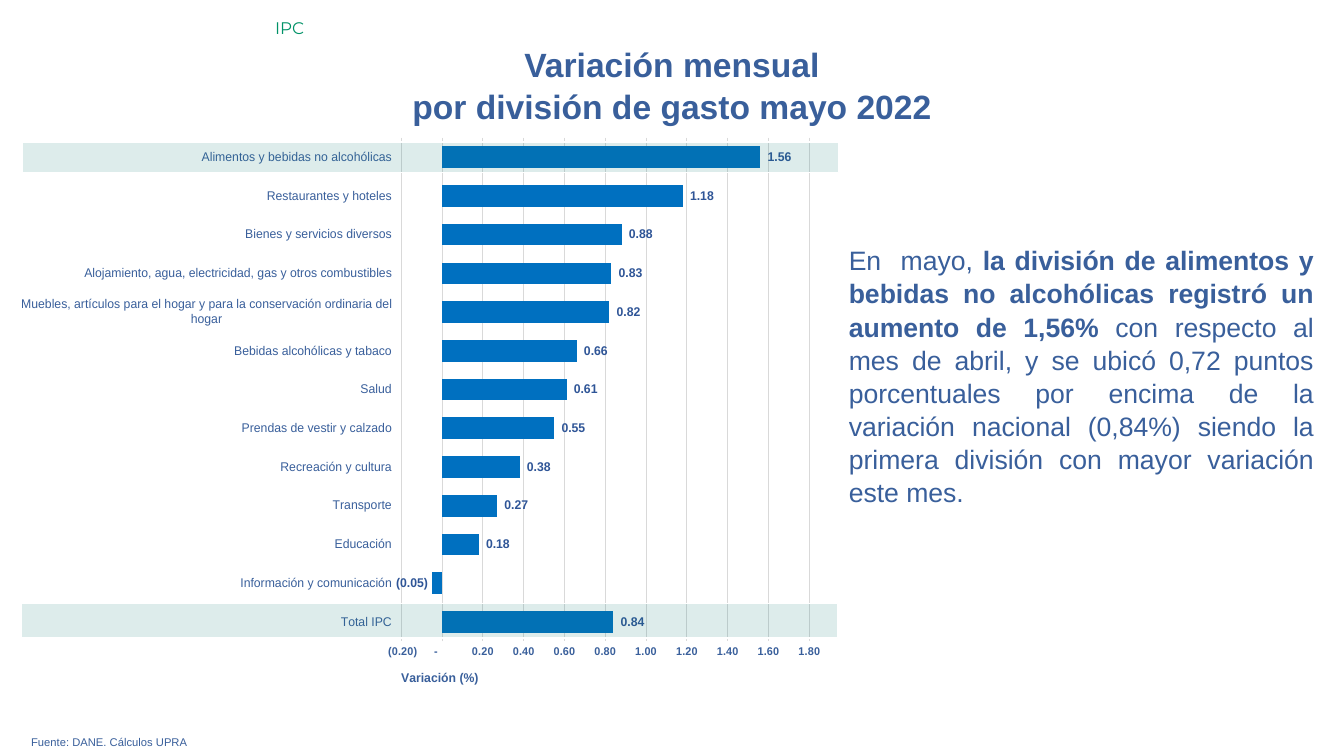
from lxml import etree
from pptx import Presentation
from pptx.chart.data import CategoryChartData
from pptx.dml.color import RGBColor
from pptx.enum.chart import XL_CHART_TYPE, XL_LABEL_POSITION, XL_TICK_LABEL_POSITION, XL_TICK_MARK
from pptx.enum.shapes import MSO_SHAPE
from pptx.enum.text import PP_ALIGN
from pptx.oxml import parse_xml
from pptx.oxml.ns import nsdecls, qn
from pptx.util import Pt

PX = 9144  # 100 px to the inch
TEXT_BLUE = "395F9B"
GRID_GREY = "D9D9D9"
NUMBER_FORMAT = '_(* #,##0.00_);_(* \\(#,##0.00\\);_(* "-"??_);_(@_)'
VARIATIONS = [
    ("Total IPC", 0.84),
    ("Información y comunicación", -0.05),
    ("Educación", 0.18),
    ("Transporte", 0.27),
    ("Recreación y cultura", 0.38),
    ("Prendas de vestir y calzado", 0.55),
    ("Salud", 0.61),
    ("Bebidas alcohólicas y tabaco", 0.66),
    ("Muebles, artículos para el hogar y para la conservación ordinaria del hogar", 0.82),
    ("Alojamiento, agua, electricidad, gas y otros combustibles", 0.83),
    ("Bienes y servicios diversos", 0.88),
    ("Restaurantes y hoteles", 1.18),
    ("Alimentos y bebidas no alcohólicas", 1.56),
]


def px(*lengths):
    return [length * PX for length in lengths]


def rgb(color):
    return RGBColor.from_string(color)


def style_font(font, size, color=TEXT_BLUE, bold=False, name="Arial"):
    font.size = Pt(size)
    font.color.rgb = rgb(color)
    font.bold = bold
    font.name = name


def add_text(page, place, paragraphs, size, align, color=TEXT_BLUE, name="Arial", spacing=1.0):
    """Add a text box; each paragraph is a list of (text, bold) runs."""
    frame = page.shapes.add_textbox(*px(*place)).text_frame
    frame.word_wrap = True
    for index, runs in enumerate(paragraphs):
        para = frame.add_paragraph() if index else frame.paragraphs[0]
        para.alignment = align
        para.line_spacing = spacing
        for text, bold in runs:
            span = para.add_run()
            span.text = text
            style_font(span.font, size, color, bold, name)


def add_band(page, place):
    """Add a translucent stripe that highlights one chart row."""
    band = page.shapes.add_shape(MSO_SHAPE.RECTANGLE, *px(*place))
    band.shadow.inherit = False
    band.fill.solid()
    band.fill.fore_color.rgb = rgb("117A76")
    color = band.fill._xPr.find(qn("a:solidFill"))[0]
    etree.SubElement(color, qn("a:alpha"), val="14000")
    band.line.color.rgb = rgb("FFFFFF")
    band.line.width = Pt(1)


def manual_layout(x, y, width=None, height=None):
    inner = '<c:layoutTarget val="inner"/>' if width else ""
    extent = f'<c:w val="{width}"/><c:h val="{height}"/>' if width else ""
    return parse_xml(
        f'<c:layout {nsdecls("c")}><c:manualLayout>{inner}'
        f'<c:xMode val="edge"/><c:yMode val="edge"/>'
        f'<c:x val="{x}"/><c:y val="{y}"/>{extent}</c:manualLayout></c:layout>'
    )


def style_line(line):
    line.color.rgb = rgb(GRID_GREY)
    line.width = Pt(0.75)


def style_category_axis(axis):
    axis.tick_label_position = XL_TICK_LABEL_POSITION.LOW
    axis.major_tick_mark = XL_TICK_MARK.NONE
    axis.has_major_gridlines = False
    style_line(axis.format.line)
    style_font(axis.tick_labels.font, 9)


def style_value_axis(axis):
    axis.minimum_scale, axis.maximum_scale, axis.major_unit = -0.2, 1.8, 0.2
    axis.major_tick_mark = XL_TICK_MARK.NONE
    axis.has_major_gridlines = True
    style_line(axis.major_gridlines.format.line)
    axis.format.line.fill.background()
    labels = axis.tick_labels
    labels.number_format = NUMBER_FORMAT
    labels.number_format_is_linked = False
    style_font(labels.font, 8, bold=True)
    span = axis.axis_title.text_frame.paragraphs[0].add_run()
    span.text = "Variación (%)"
    style_font(span.font, 9, bold=True)
    title = axis.axis_title._element
    for layout in title.findall(qn("c:layout")):
        title.remove(layout)
    title.find(qn("c:tx")).addnext(manual_layout(0.45, 0.95))


def add_variation_chart(page, place):
    data = CategoryChartData(number_format="0.00")
    data.categories = [division for division, _ in VARIATIONS]
    data.add_series("Variación", [value for _, value in VARIATIONS])
    chart = page.shapes.add_chart(XL_CHART_TYPE.BAR_CLUSTERED, *px(*place), data).chart
    chart.has_title = False
    chart.has_legend = False
    style_font(chart.font, 10.5, "000000")
    style_category_axis(chart.category_axis)
    style_value_axis(chart.value_axis)

    plot = chart.plots[0]
    plot.gap_width = 79
    plot.vary_by_categories = False
    series = plot.series[0]
    series.invert_if_negative = False
    series.format.fill.solid()
    series.format.fill.fore_color.rgb = rgb("0070C0")
    labels = series.data_labels
    labels.show_value = True
    labels.position = XL_LABEL_POSITION.OUTSIDE_END
    labels.number_format = NUMBER_FORMAT
    labels.number_format_is_linked = False
    style_font(labels.font, 9, "2F5597", bold=True)

    area = chart._chartSpace.chart.plotArea
    for layout in area.findall(qn("c:layout")):
        area.remove(layout)
    area.insert(0, manual_layout(0.453, 0.036, 0.521, 0.869))


def main():
    deck = Presentation()
    deck.slide_width, deck.slide_height = px(1333, 750)
    page = deck.slides.add_slide(deck.slide_layouts[6])

    add_variation_chart(page, (21, 116, 802, 575))
    add_text(page, (21, 725, 1291, 24), [[("Fuente: DANE. Cálculos UPRA", False)]],
             8, PP_ALIGN.JUSTIFY)
    comment = [
        ("En  mayo, ", False),
        ("la división de alimentos y bebidas no alcohólicas registró un aumento de 1,56% ", True),
        ("con respecto al mes de abril, y se ubicó 0,72 puntos porcentuales por encima de la "
         "variación nacional (0,84%) siendo la primera división con mayor variación este mes.",
         False),
    ]
    add_text(page, (832, 236, 481, 266), [comment], 19, PP_ALIGN.JUSTIFY, spacing=1.04)
    title = [[("Variación mensual", True)], [("por división de gasto mayo 2022", True)]]
    add_text(page, (138, 37, 1057, 91), title, 24, PP_ALIGN.CENTER, spacing=1.04)
    add_text(page, (263, 13, 1070, 30), [[("IPC", False)]], 12, PP_ALIGN.LEFT,
             "009267", "Montserrat")
    add_band(page, (21, 599, 810, 34))
    add_band(page, (22, 141, 810, 30))

    deck.save("out.pptx")


if __name__ == "__main__":
    main()
